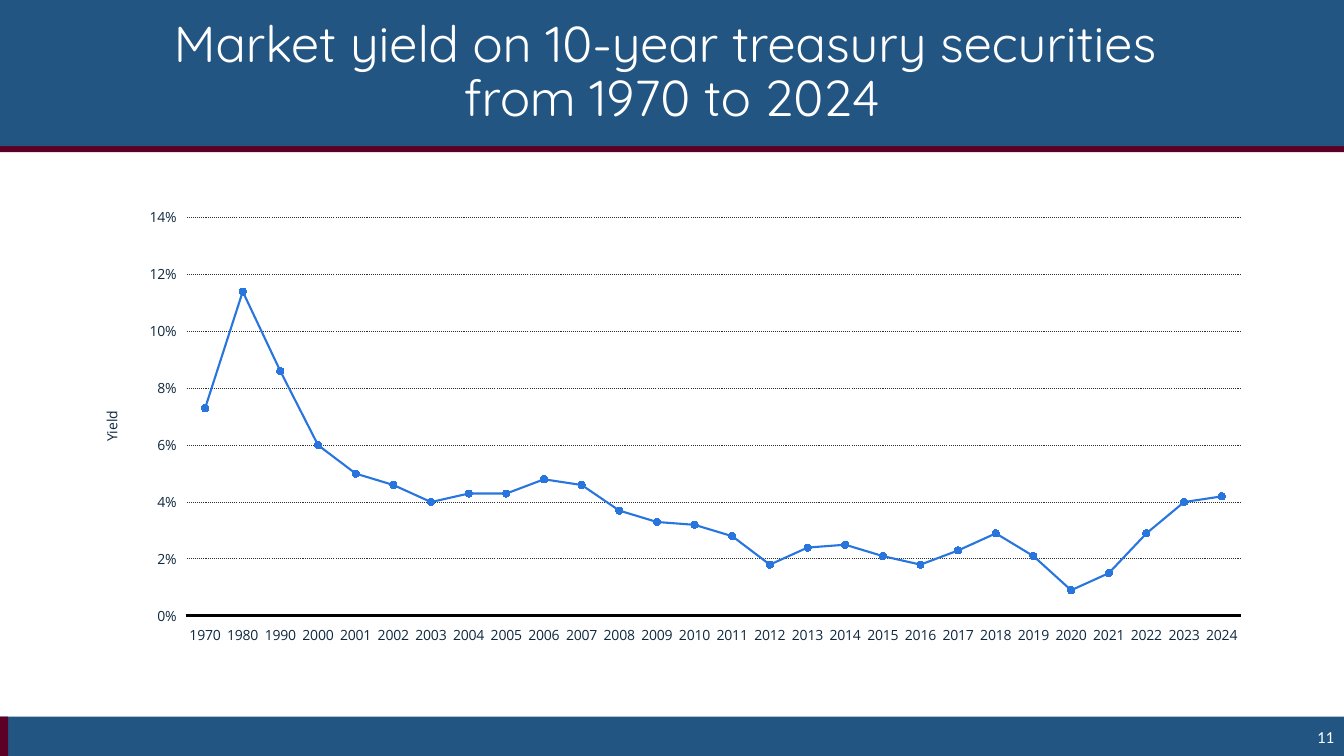
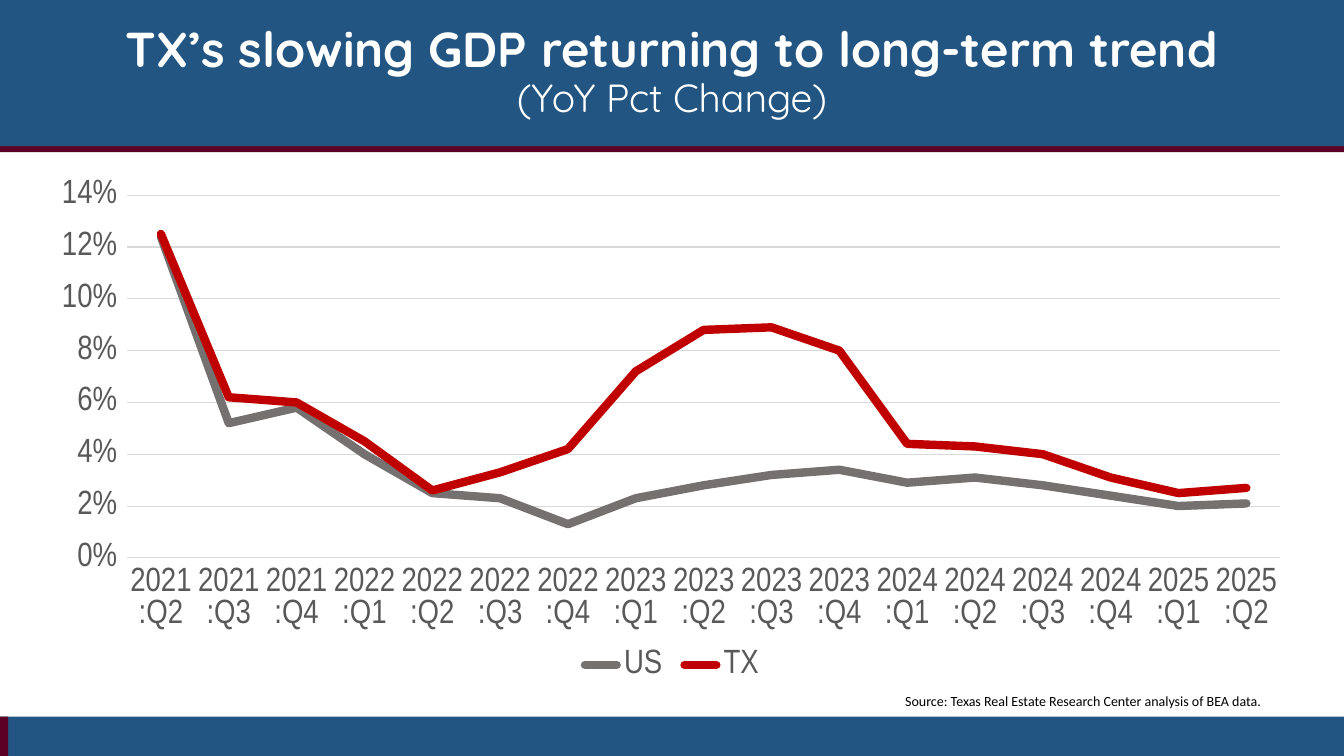
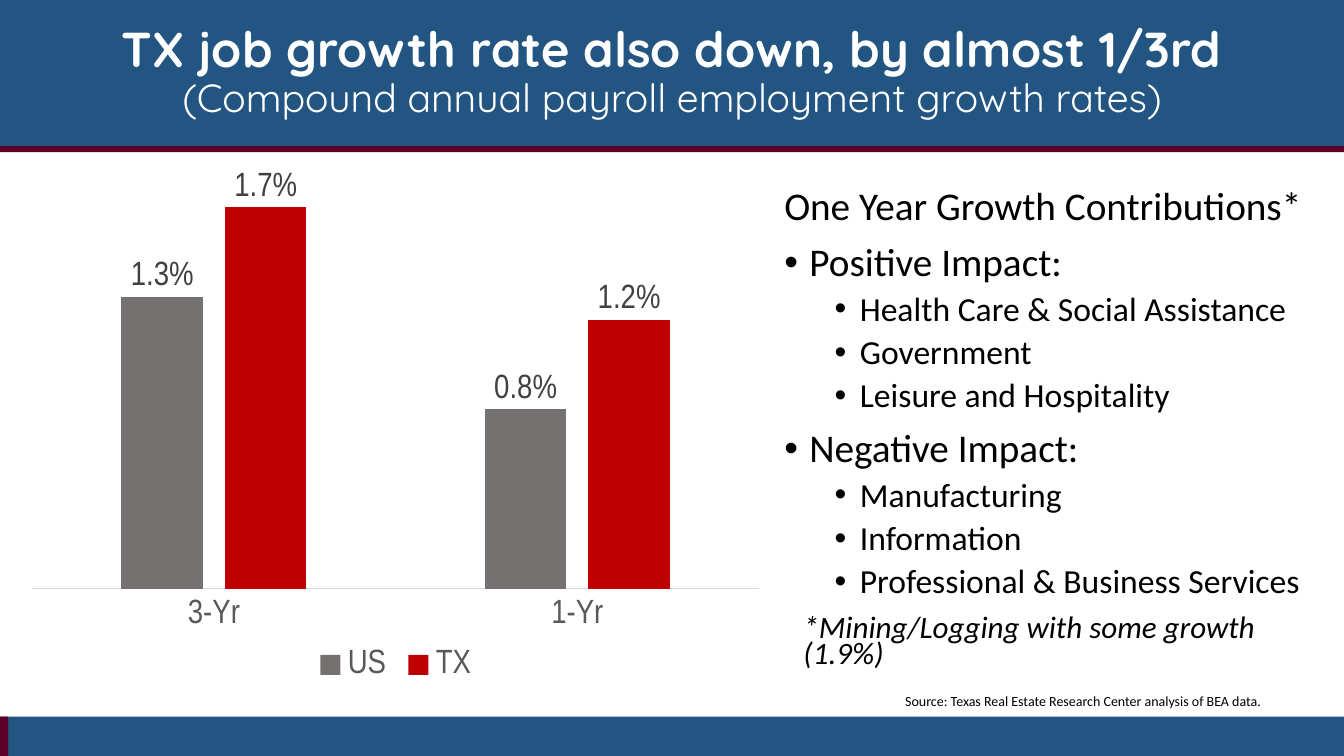
from copy import deepcopy
from dataclasses import dataclass
from typing import NamedTuple

from lxml.etree import SubElement
from pptx import Presentation
from pptx.chart.data import CategoryChartData as Data
from pptx.dml.color import RGBColor
from pptx.enum.chart import XL_CHART_TYPE as Kind, XL_LABEL_POSITION as Spot
from pptx.enum.chart import XL_LEGEND_POSITION as Side, XL_MARKER_STYLE as Mark
from pptx.enum.chart import XL_TICK_LABEL_POSITION as Place, XL_TICK_MARK as Tick
from pptx.enum.dml import MSO_LINE as Dash
from pptx.enum.shapes import MSO_SHAPE as Form
from pptx.enum.text import MSO_ANCHOR as Anchor, MSO_AUTO_SIZE as Fit, PP_ALIGN as Align
from pptx.oxml.ns import qn
from pptx.util import Inches, Pt

BLUE, WINE, WHITE, BLACK = "235582", "5C0025", "FFFFFF", "000000"
NAVY, SKY, DOTS = "0F283E", "2875DD", "2F2F2F"
GRAY, RED, TEXT, LABEL, RULE = "767171", "C00000", "595959", "404040", "D9D9D9"
HEAD, BODY, PLOT, SMALL = "Quicksand", "Calibri", "Arial Narrow", "Open Sans"
SOURCE = "Source: Texas Real Estate Research Center analysis of BEA data."


class Box(NamedTuple):
    """Left, top, width and height in inches."""
    x: float
    y: float
    w: float
    h: float

    def place(self) -> tuple:
        """Return the four lengths."""
        return tuple(Inches(v) for v in self)


class Band(NamedTuple):
    """A filled strip."""
    box: Box
    color: str


class Line(NamedTuple):
    """One line of a title."""
    text: str
    size: float
    bold: bool = False


class Item(NamedTuple):
    """One list paragraph."""
    text: str
    level: int = 0
    bullet: bool = True


class Series(NamedTuple):
    """A named row of chart values."""
    name: str
    color: str
    values: tuple


@dataclass
class Graph:
    """A chart with its frame, plot area and axis settings."""
    kind: Kind
    box: Box
    area: Box
    cats: list
    series: list
    top: float
    step: float
    font: str = PLOT
    size: float = 24
    color: str = TEXT
    axis: tuple = (RULE, 0.75)
    grid: tuple = (RULE, 0.75)
    form: str = "0%"


BANDS = [
    Band(Box(0, 7.11, 13.33, 0.4), BLUE),
    Band(Box(0, 1.45, 13.33, 0.06), WINE),
    Band(Box(0, 7.11, 0.08, 0.4), WINE),
]
YIELD = Graph(
    Kind.LINE_MARKERS, Box(0.79, 1.98, 11.75, 4.49), Box(0.09, 0.04, 0.89, 0.88),
    ["1970", "1980", "1990"] + [str(y) for y in range(2000, 2025)],
    [Series("Series 1", SKY, (
        0.073, 0.114, 0.086, 0.06, 0.05, 0.046, 0.04, 0.043, 0.043, 0.048,
        0.046, 0.037, 0.033, 0.032, 0.028, 0.018, 0.024, 0.025, 0.021, 0.018,
        0.023, 0.029, 0.021, 0.009, 0.015, 0.029, 0.04, 0.042))],
    0.14, 0.02, SMALL, 10, NAVY, (BLACK, 2), (DOTS, 0.75), "#,##0%")
GDP = Graph(
    Kind.LINE, Box(0.38, 1.68, 12.57, 5.14), Box(0.07, 0.05, 0.91, 0.7),
    [f"{2021 + n // 4}:Q{n % 4 + 1}" for n in range(1, 18)],
    [Series("US", GRAY, (
        0.124, 0.052, 0.058, 0.04, 0.025, 0.023, 0.013, 0.023, 0.028,
        0.032, 0.034, 0.029, 0.031, 0.028, 0.024, 0.02, 0.021)),
     Series("TX", RED, (
         0.125, 0.062, 0.06, 0.045, 0.026, 0.033, 0.042, 0.072, 0.088,
         0.089, 0.08, 0.044, 0.043, 0.04, 0.031, 0.025, 0.027))],
    0.14, 0.02)
JOBS = Graph(
    Kind.COLUMN_CLUSTERED, Box(0.17, 1.68, 7.51, 5.14), Box(0.02, 0.03, 0.96, 0.78),
    ["3-Yr", "1-Yr"],
    [Series("US", GRAY, (0.013, 0.008)), Series("TX", RED, (0.017, 0.012))],
    0.018, 0.002, form="0.0%")
ITEMS = [
    Item("One Year Growth Contributions*", bullet=False),
    Item("Positive Impact:"),
    Item("Health Care & Social Assistance", 1),
    Item("Government", 1),
    Item("Leisure and Hospitality", 1),
    Item("Negative Impact:"),
    Item("Manufacturing", 1),
    Item("Information", 1),
    Item("Professional & Business Services", 1),
]


def rgb(color: str) -> RGBColor:
    """Turn a hex string into a colour."""
    return RGBColor.from_string(color)


def paint(part, color: str) -> None:
    """Fill a shape or format with one colour."""
    part.fill.solid()
    part.fill.fore_color.rgb = rgb(color)


def stroke(line, color: str, width: float) -> None:
    """Set the colour and width of a line."""
    line.color.rgb = rgb(color)
    line.width = Pt(width)


def style(font, name: str, size: float, color: str, bold: bool = False,
          italic: bool = False) -> None:
    """Set all properties of a font."""
    font.name, font.size, font.bold, font.italic = name, Pt(size), bold, italic
    font.color.rgb = rgb(color)


def add_bands(slide, layout) -> None:
    """Draw the strips and move them to the shared layout."""
    for num, band in enumerate(BANDS, 20):
        strip = slide.shapes.add_shape(Form.RECTANGLE, *band.box.place())
        strip.shadow.inherit = False
        strip.line.fill.background()
        paint(strip, band.color)
        strip.name = f"Band {num}"
        strip._element.nvSpPr.cNvPr.set("id", str(num))
        layout.shapes._spTree.append(strip._element)


def add_title(slide, lines: list) -> None:
    """Place and format the title."""
    title = slide.shapes.title
    title.left, title.top, title.width, title.height = Box(0, 0, 13.33, 1.45).place()
    paint(title, BLUE)
    frame = title.text_frame
    frame.word_wrap, frame.auto_size = True, Fit.NONE
    frame.vertical_anchor = Anchor.MIDDLE
    para = frame.paragraphs[0]
    para.text = "\v".join(line.text for line in lines)
    para.alignment, para.line_spacing = Align.CENTER, 0.9
    for run, line in zip(para.runs, lines):
        style(run.font, HEAD, line.size, WHITE, line.bold)
    for gap in para._p.findall(qn("a:br")):
        gap.append(deepcopy(para.runs[0]._r.rPr))


def add_text(slide, box: Box, text: str, size: float, color: str = BLACK,
             italic: bool = False, wrap: bool = True):
    """Add a one-paragraph text box and return its frame."""
    frame = slide.shapes.add_textbox(*box.place()).text_frame
    frame.word_wrap = wrap
    frame.text = text
    style(frame.paragraphs[0].runs[0].font, BODY, size, color, italic=italic)
    return frame


def add_source(slide) -> None:
    """Add the source line."""
    frame = add_text(slide, Box(8.88, 6.82, 3.81, 0.27), SOURCE, 10, wrap=False)
    frame.auto_size = Fit.SHAPE_TO_FIT_TEXT


def add_list(slide, box: Box, items: list) -> None:
    """Add a bulleted list on two levels."""
    frame = slide.shapes.add_textbox(*box.place()).text_frame
    frame.word_wrap = True
    for num, item in enumerate(items):
        para = frame.add_paragraph() if num else frame.paragraphs[0]
        para.text, para.level, para.line_spacing = item.text, item.level, 0.9
        if num:
            para.space_before = Pt(5 if item.level else 10)
        if item.bullet:
            props = para._p.get_or_add_pPr()
            props.set("marL", str(Inches(0.25 + 0.5 * item.level)))
            props.set("indent", str(Inches(-0.25)))
            SubElement(props, qn("a:buFont")).set("typeface", "Arial")
            SubElement(props, qn("a:buChar")).set("char", "•")
        style(para.runs[0].font, BODY, 24 if item.level else 28, BLACK)


def set_area(chart, area: Box) -> None:
    """Fix the inner plot area as shares of the chart frame."""
    plot = chart._chartSpace.chart.plotArea
    for old in plot.findall(qn("c:layout")):
        plot.remove(old)
    layout = SubElement(plot, qn("c:layout"))
    plot.insert(0, layout)
    manual = SubElement(layout, qn("c:manualLayout"))
    pairs = [("layoutTarget", "inner"), ("xMode", "edge"), ("yMode", "edge")]
    for tag, val in pairs + list(area._asdict().items()):
        SubElement(manual, qn(f"c:{tag}")).set("val", str(val))


def add_graph(slide, graph: Graph):
    """Add a chart with its axes and return it."""
    data = Data(number_format=graph.form)
    data.categories = graph.cats
    for row in graph.series:
        data.add_series(row.name, row.values)
    chart = slide.shapes.add_chart(graph.kind, *graph.box.place(), data).chart
    chart.has_title = chart.has_legend = False
    style(chart.font, graph.font, graph.size, graph.color)
    chart.plots[0].vary_by_categories = False
    cat, val = chart.category_axis, chart.value_axis
    for axis in (cat, val):
        axis.major_tick_mark = axis.minor_tick_mark = Tick.NONE
        axis.tick_label_position = Place.LOW
        style(axis.tick_labels.font, graph.font, graph.size, graph.color)
    cat.has_major_gridlines = False
    stroke(cat.format.line, *graph.axis)
    val.minimum_scale, val.maximum_scale = 0, graph.top
    val.major_unit = graph.step
    val.tick_labels.number_format = graph.form
    val.tick_labels.number_format_is_linked = False
    val.format.line.fill.background()
    stroke(val.major_gridlines.format.line, *graph.grid)
    set_area(chart, graph.area)
    return chart


def add_legend(chart, graph: Graph) -> None:
    """Put the legend below the plot."""
    chart.has_legend = True
    chart.legend.position = Side.BOTTOM
    chart.legend.include_in_layout = False
    style(chart.legend.font, graph.font, graph.size, graph.color)


def draw_lines(chart, graph: Graph, width: float) -> None:
    """Format the series of a line chart."""
    for part, row in zip(chart.plots[0].series, graph.series):
        part.smooth = False
        stroke(part.format.line, row.color, width)
        part.format.line._get_or_add_ln().set("cap", "rnd")
        part.marker.style = Mark.NONE


def draw_bars(chart, graph: Graph) -> None:
    """Format the columns and their labels."""
    plot = chart.plots[0]
    plot.gap_width, plot.overlap = 219, -27
    for part, row in zip(plot.series, graph.series):
        paint(part.format, row.color)
        labels = part.data_labels
        labels.show_value, labels.position = True, Spot.OUTSIDE_END
        labels.number_format, labels.number_format_is_linked = graph.form, False
        style(labels.font, graph.font, graph.size, LABEL)


def yield_slide(slide) -> None:
    """Build the treasury yield slide."""
    add_title(slide, [Line("Market yield on 10-year treasury securities ", 36),
                      Line("from 1970 to 2024", 36)])
    chart = add_graph(slide, YIELD)
    draw_lines(chart, YIELD, 1.5)
    mark = chart.plots[0].series[0].marker
    mark.style, mark.size = Mark.CIRCLE, 5
    paint(mark.format, SKY)
    stroke(mark.format.line, SKY, 0.75)
    axis = chart.value_axis
    axis.major_gridlines.format.line.dash_style = Dash.ROUND_DOT
    name = axis.axis_title.text_frame
    name.text = "Yield"
    style(name.paragraphs[0].runs[0].font, SMALL, 10, NAVY)
    page = add_text(slide, Box(12.86, 7.11, 0.47, 0.4), "11", 12, WHITE)
    page.vertical_anchor = Anchor.MIDDLE
    page.paragraphs[0].alignment = Align.RIGHT


def gdp_slide(slide) -> None:
    """Build the output growth slide."""
    add_title(slide, [Line("TX’s slowing GDP returning to long-term trend", 35, True),
                      Line("(YoY Pct Change)", 28)])
    chart = add_graph(slide, GDP)
    draw_lines(chart, GDP, 6)
    add_legend(chart, GDP)
    add_source(slide)


def jobs_slide(slide) -> None:
    """Build the job growth slide."""
    add_title(slide, [Line("TX job growth rate also down, by almost 1/3rd", 35, True),
                      Line("(Compound annual payroll employment growth rates)", 28)])
    chart = add_graph(slide, JOBS)
    chart.value_axis.has_major_gridlines = False
    chart.value_axis.visible = False
    draw_bars(chart, JOBS)
    add_legend(chart, JOBS)
    add_source(slide)
    add_list(slide, Box(7.68, 1.8, 5.48, 4.28), ITEMS)
    note = add_text(slide, Box(7.87, 6.08, 4.83, 0.66),
                    "*Mining/Logging with some growth (1.9%)", 22.2, italic=True)
    note.paragraphs[0].line_spacing = 0.7


def main() -> None:
    """Build and save the deck."""
    deck = Presentation()
    deck.slide_width, deck.slide_height = Inches(13.33), Inches(7.5)
    layout = deck.slide_layouts[5]
    for num, build in enumerate((yield_slide, gdp_slide, jobs_slide)):
        slide = deck.slides.add_slide(layout)
        if num == 0:
            add_bands(slide, layout)
        build(slide)
    deck.save("out.pptx")


if __name__ == "__main__":
    main()
